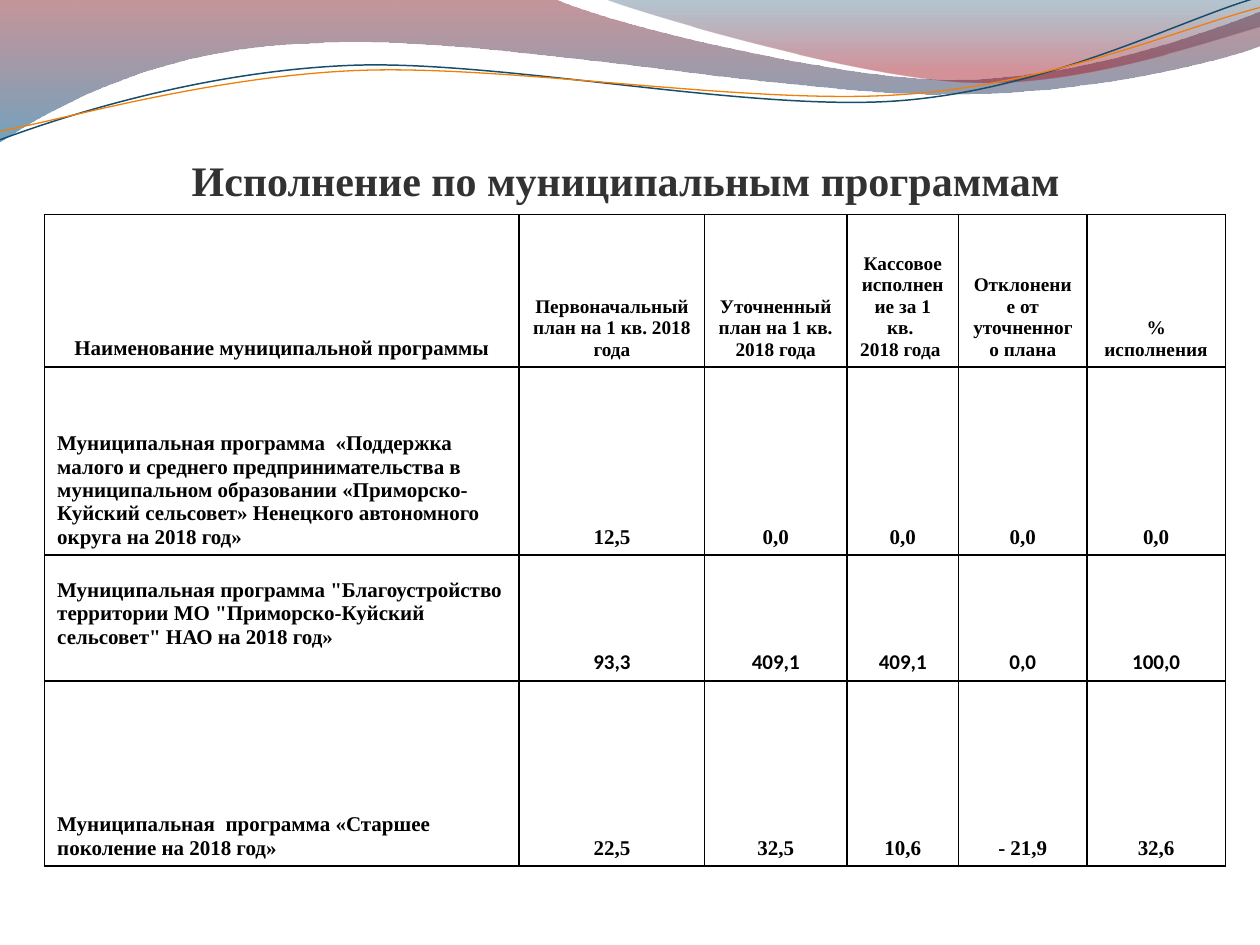
from dataclasses import dataclass
from math import cos, radians, sin

from lxml import etree
from pptx import Presentation
from pptx.dml.color import RGBColor
from pptx.enum.text import MSO_ANCHOR, MSO_AUTO_SIZE, PP_ALIGN
from pptx.oxml.ns import qn
from pptx.util import Pt

LEFT, CENTER = PP_ALIGN.LEFT, PP_ALIGN.CENTER
BOTTOM = MSO_ANCHOR.BOTTOM
NO_FIT = MSO_AUTO_SIZE.NONE
SERIF, SANS = "Times New Roman", "Calibri"
TITLE_ONLY = 5

COLORS = {
    "title": "323232",
    "text": "000000",
    "border": "000000",
    "wine": "7E1621",
    "blue": "005689",
    "navy": "094467",
    "red": "A10F1F",
    "line_blue": "184E6D",
    "line_orange": "F07F09",
}


@dataclass
class Stop:
    position: float
    color: str
    alpha: int  # percent


@dataclass
class Wave:
    """Segments hold 2 numbers (a line) or 6 (a cubic curve), in points."""
    box: tuple  # left, top, width, height before rotation
    start: tuple
    segments: list
    stops: tuple = ()
    line: str = ""
    width: float = 0
    rotation: float = 0


@dataclass
class Row:
    height: float
    name: str
    values: list
    font: str = SERIF
    value_size: float = 12
    name_align: PP_ALIGN = LEFT
    name_bottom: float = 3.6


WAVES = [
    Wave((-0.7, -0.7, 721.4, 82.1), (0, 0), [
        (316.8, -0.7),
        (342.7, 12.2, 478.1, 45.4, 545.8, 45.4),
        (614.2, 45.4, 689.8, 18.7, 720, 6.5),
        (720.7, 25.9),
        (707.8, 31.7, 626.4, 54.7, 537.1, 54),
        (447.8, 54, 275, 20.2, 185, 24.5),
        (92.9, 25.9, 33.1, 59.8, -0.7, 81.4),
        (0, 0),
    ], stops=(Stop(0, "wine", 45), Stop(1, "blue", 55))),
    Wave((344.9, -0.7, 375.1, 50.4), (344.9, -0.7), [
        (366.5, 7.9, 491, 44.6, 553.7, 46.8),
        (616.3, 49.7, 691.9, 23, 720, 15.1),
        (720, 0),
        (344.9, -0.7),
    ], stops=(Stop(0, "navy", 30), Stop(0.8, "red", 45))),
    Wave((-1.4, 15.8, 721.4, 51.1), (0, 79.9), [
        (34.6, 67, 113.8, 41, 199.4, 37.4),
        (284.4, 33.8, 427, 64.1, 513.4, 57.6),
        (599.8, 51.1, 675.4, 10.8, 718.6, -1.4),
    ], line="line_blue", width=0.85, rotation=357.3),
    Wave((-1.4, 21.6, 722.2, 41.8), (0, 74.9), [
        (33.8, 69.1, 118.1, 43.9, 203.8, 40.3),
        (290.2, 36.7, 429.8, 60.5, 516.2, 54),
        (601.9, 48.2, 677.5, 15.1, 720, 4.3),
    ], line="line_orange", width=0.75, rotation=357.3),
]

COLUMN_WIDTHS = [271.2, 106, 81.2, 64, 73.2, 79.2]
ROWS = [
    Row(87, "Наименование муниципальной программы",
        ["Первоначальный план на 1 кв. 2018 года",
         "Уточненный план на 1 кв. 2018 года",
         "Кассовое исполнение за 1 кв. \n2018 года ",
         "Отклонение от уточненного плана",
         "% исполнения"],
        value_size=11, name_align=CENTER),
    Row(107.6, "Муниципальная программа  «Поддержка малого и среднего "
        "предпринимательства в муниципальном образовании «Приморско-Куйский "
        "сельсовет» Ненецкого автономного округа на 2018 год»",
        ["12,5", "0,0", "0,0", "0,0", "0,0"]),
    Row(72, "Муниципальная программа \"Благоустройство территории МО "
        "\"Приморско-Куйский сельсовет\" НАО на 2018 год»",
        ["93,3", "409,1", "409,1", "0,0", "100,0"],
        font=SANS, name_bottom=18.4),
    Row(105.8, "Муниципальная  программа «Старшее поколение на 2018 год»",
        ["22,5", "32,5", "10,6", "- 21,9", "32,6"]),
]


def rgb(name: str) -> RGBColor:
    return RGBColor.from_string(COLORS[name])


def style(p, font: str, size: float, color: str, align: PP_ALIGN) -> None:
    p.alignment = align
    p.font.name, p.font.size, p.font.bold = font, Pt(size), True
    p.font.color.rgb = rgb(color)


def add_step(path, tag: str, numbers: tuple, wave: Wave) -> None:
    """Add a path command, turning its points back into the unrotated box."""
    left, top, width, height = wave.box
    turn = radians(-wave.rotation)
    step = etree.SubElement(path, qn(tag))
    for x, y in zip(numbers[::2], numbers[1::2]):
        dx, dy = x - left - width / 2, y - top - height / 2
        etree.SubElement(
            step, qn("a:pt"),
            x=str(Pt(width / 2 + dx * cos(turn) - dy * sin(turn))),
            y=str(Pt(height / 2 + dx * sin(turn) + dy * cos(turn))))


def draw_wave(s, wave: Wave) -> None:
    left, top, width, height = (Pt(v) for v in wave.box)
    builder = s.shapes.build_freeform(left, top)
    builder.add_line_segments([(left + width, top + height)], close=False)
    sp = builder.convert_to_shape()
    sp.rotation = wave.rotation

    # Curved outline
    path = next(sp._element.iter(qn("a:path")))
    for child in list(path):
        path.remove(child)
    add_step(path, "a:moveTo", wave.start, wave)
    for segment in wave.segments:
        tag = "a:lnTo" if len(segment) == 2 else "a:cubicBezTo"
        add_step(path, tag, segment, wave)

    # Line or gradient
    sp.shadow.inherit = False
    if not wave.stops:
        sp.fill.background()
        sp.line.color.rgb = rgb(wave.line)
        sp.line.width = Pt(wave.width)
        return
    etree.SubElement(path, qn("a:close"))
    sp.line.fill.background()
    sp.fill.gradient()
    sp.fill.gradient_angle = 270
    for target, stop in zip(sp.fill.gradient_stops, wave.stops):
        target.position = stop.position
        target.color.rgb = rgb(stop.color)
    for clr, stop in zip(sp._element.spPr.iter(qn("a:srgbClr")), wave.stops):
        etree.SubElement(clr, qn("a:alpha"), val=str(stop.alpha * 1000))


def draw_borders(cell, color: str, width: float) -> None:
    tc_pr = cell._tc.get_or_add_tcPr()
    for side in ("a:lnL", "a:lnR", "a:lnT", "a:lnB"):
        ln = etree.SubElement(tc_pr, qn(side), w=str(Pt(width)))
        fill = etree.SubElement(ln, qn("a:solidFill"))
        etree.SubElement(fill, qn("a:srgbClr"), val=COLORS[color])


def draw_table(s, left: float, top: float) -> None:
    frame = s.shapes.add_table(
        len(ROWS), len(COLUMN_WIDTHS), Pt(left), Pt(top),
        Pt(sum(COLUMN_WIDTHS)), Pt(sum(row.height for row in ROWS)))
    table = frame.table
    for column, width in zip(table.columns, COLUMN_WIDTHS):
        column.width = Pt(width)
    for i, row in enumerate(ROWS):
        table.rows[i].height = Pt(row.height)
        for j, text in enumerate([row.name, *row.values]):
            cell = table.cell(i, j)
            cell.text = text
            cell.vertical_anchor = BOTTOM
            draw_borders(cell, "border", 1)
            cell.fill.background()
            for p in cell.text_frame.paragraphs:
                if j == 0:
                    style(p, SERIF, 12, "text", row.name_align)
                else:
                    style(p, row.font, row.value_size, "text", CENTER)
        table.cell(i, 0).margin_bottom = Pt(row.name_bottom)


def main() -> None:
    prs = Presentation()
    prs.slide_width, prs.slide_height = Pt(720), Pt(540)
    s = prs.slides.add_slide(prs.slide_layouts[TITLE_ONLY])

    # Wavy header
    for wave in WAVES:
        draw_wave(s, wave)

    # Title, in front of the waves
    title = s.shapes.title
    s.shapes._spTree.append(title._element)
    title.left, title.top, title.width, title.height = (
        Pt(31), Pt(55.8), Pt(653), Pt(61.2))
    tf = title.text_frame
    tf.text = "Исполнение по муниципальным программам"
    tf.auto_size, tf.vertical_anchor = NO_FIT, BOTTOM
    tf.margin_left = tf.margin_right = tf.margin_bottom = 0
    style(tf.paragraphs[0], SERIF, 24, "title", CENTER)

    # Programme table
    draw_table(s, 25.5, 122.6)
    prs.save("out.pptx")


if __name__ == "__main__":
    main()
